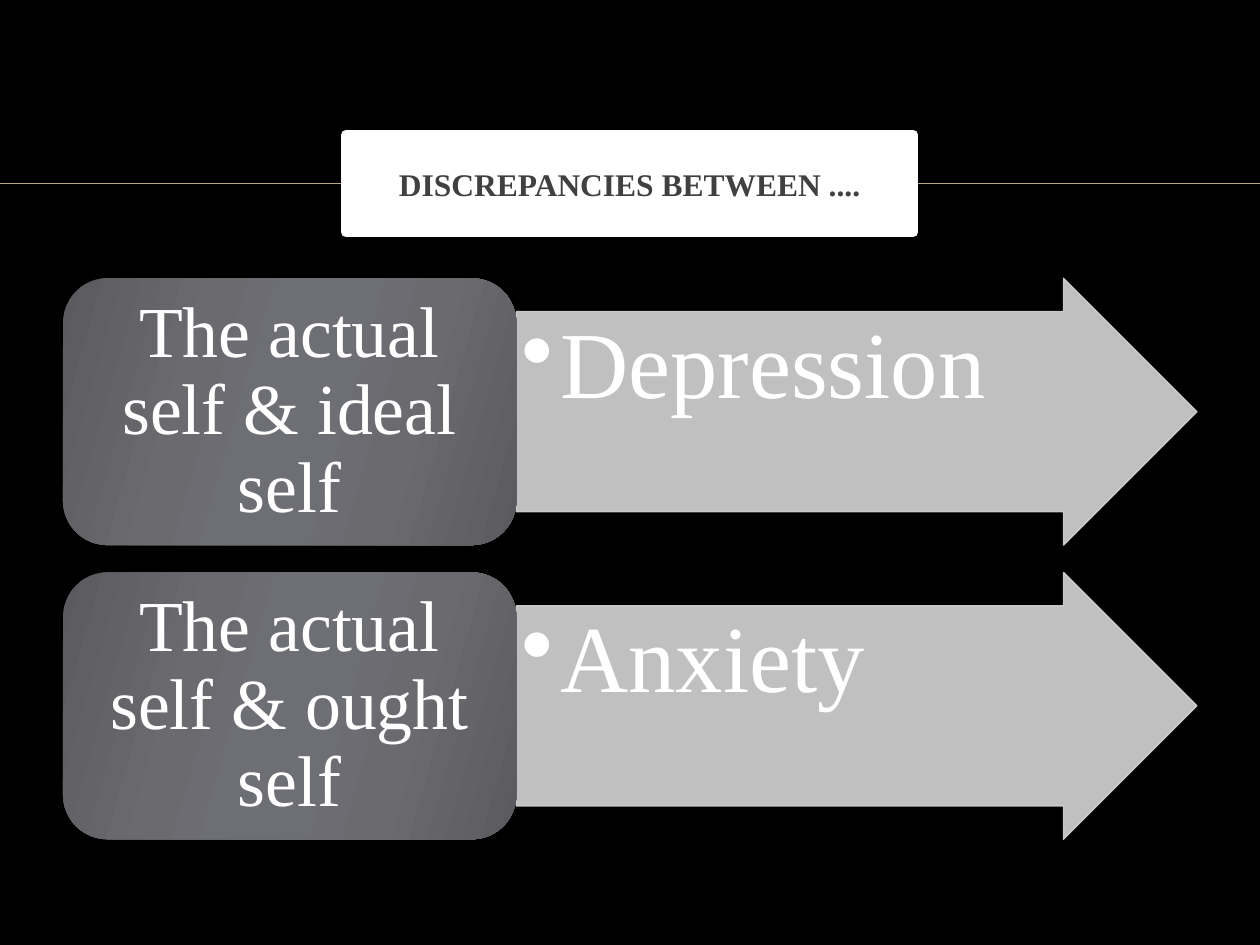
from lxml import etree
from pptx import Presentation
from pptx.dml.color import RGBColor
from pptx.enum.shapes import MSO_CONNECTOR, MSO_SHAPE
from pptx.enum.text import MSO_ANCHOR, PP_ALIGN
from pptx.oxml.ns import qn
from pptx.util import Cm, Pt

RECT, ROUND = MSO_SHAPE.RECTANGLE, MSO_SHAPE.ROUNDED_RECTANGLE
ARROW = MSO_SHAPE.RIGHT_ARROW
LEFT, CENTER = PP_ALIGN.LEFT, PP_ALIGN.CENTER
TOP, MIDDLE = MSO_ANCHOR.TOP, MSO_ANCHOR.MIDDLE

BLACK = RGBColor(0x00, 0x00, 0x00)
WHITE = RGBColor(0xFF, 0xFF, 0xFF)
DARK = RGBColor(0x40, 0x40, 0x40)
SILVER = RGBColor(0xD5, 0xD5, 0xD6)
TAN = RGBColor(0xBB, 0xAA, 0x8A)
STOPS = [(0, "5B5B5F"), (30, "6A6A6F"), (45, "6E6E75"),
         (55, "6E6E75"), (73, "6A6A6F"), (100, "5B5B5F")]
FONT = "Times New Roman"

ROWS = [("The actual self & ideal self", "Depression"),
        ("The actual self & ought self", "Anxiety")]

prs = Presentation()
prs.slide_width, prs.slide_height = Cm(25.4), Cm(19.05)
slide = prs.slides.add_slide(prs.slide_layouts[6])
slide.background.fill.solid()
slide.background.fill.fore_color.rgb = BLACK


def add_block(kind, x, y, w, h, text, size, color, align, anchor, pad):
    shape = slide.shapes.add_shape(kind, Cm(x), Cm(y), Cm(w), Cm(h))
    shape.shadow.inherit = False
    frame = shape.text_frame
    frame.word_wrap = True
    frame.vertical_anchor = anchor
    frame.margin_left = frame.margin_right = Cm(pad[0])
    frame.margin_top = frame.margin_bottom = Cm(pad[1])
    para = frame.paragraphs[0]
    para.text = text
    para.alignment = align
    para.font.name, para.font.size = FONT, Pt(size)
    para.font.color.rgb = color
    return shape, para


def add_node(parent, tag, **attrs):
    node = etree.SubElement(parent, qn(tag))
    for key, value in attrs.items():
        node.set(key, str(value))
    return node


# Rule behind the title
rule = slide.shapes.add_connector(
    MSO_CONNECTOR.STRAIGHT, 0, Cm(3.7), prs.slide_width, Cm(3.7))
rule.line.color.rgb = TAN
rule.line.width = Pt(1)
add_node(rule._element.spPr, "a:effectLst")

# Rows: an arrow with its outcome, then the box with the cause
for i, (cause, result) in enumerate(ROWS):
    y = 5.61 + i * 5.93
    arrow, para = add_block(ARROW, 10.41, y, 13.72, 5.38, result, 54, WHITE,
                            LEFT, TOP, (0.1, 0.1))
    arrow.adjustments[0], arrow.adjustments[1] = 0.75, 0.5
    arrow.fill.solid()
    arrow.fill.fore_color.rgb = SILVER
    arrow.line.color.rgb = SILVER
    arrow.line.width = Pt(0.75)
    for color in arrow._element.spPr.iter(qn("a:srgbClr")):
        add_node(color, "a:alpha", val=90000)
    para.line_spacing = 0.9
    props = para._p.get_or_add_pPr()
    props.set("marL", str(Cm(0.79)))
    props.set("indent", str(-Cm(0.79)))
    bullet = add_node(props, "a:buChar", char="•")
    props.find(qn("a:defRPr")).addprevious(bullet)

    box, para = add_block(ROUND, 1.27, y, 9.14, 5.38, cause, 41, WHITE,
                          CENTER, MIDDLE, (0.43, 0.22))
    para.line_spacing = 0.9
    box.line.fill.background()
    box.fill.gradient()
    box.fill.gradient_angle = 344
    stops = box._element.spPr.find(".//" + qn("a:gsLst"))
    for old in list(stops):
        stops.remove(old)
    for place, shade in STOPS:
        stop = add_node(stops, "a:gs", pos=place * 1000)
        add_node(stop, "a:srgbClr", val=shade)

# Title
title, para = add_block(RECT, 6.98, 2.72, 11.43, 1.96,
                        "DISCREPANCIES BETWEEN ....", 18, DARK,
                        CENTER, MIDDLE, (0.25, 0.13))
title.fill.solid()
title.fill.fore_color.rgb = WHITE
title.line.color.rgb = WHITE
title.line.width = Pt(6)
para.font.bold = True
para.space_before = Pt(4)

prs.save("out.pptx")
